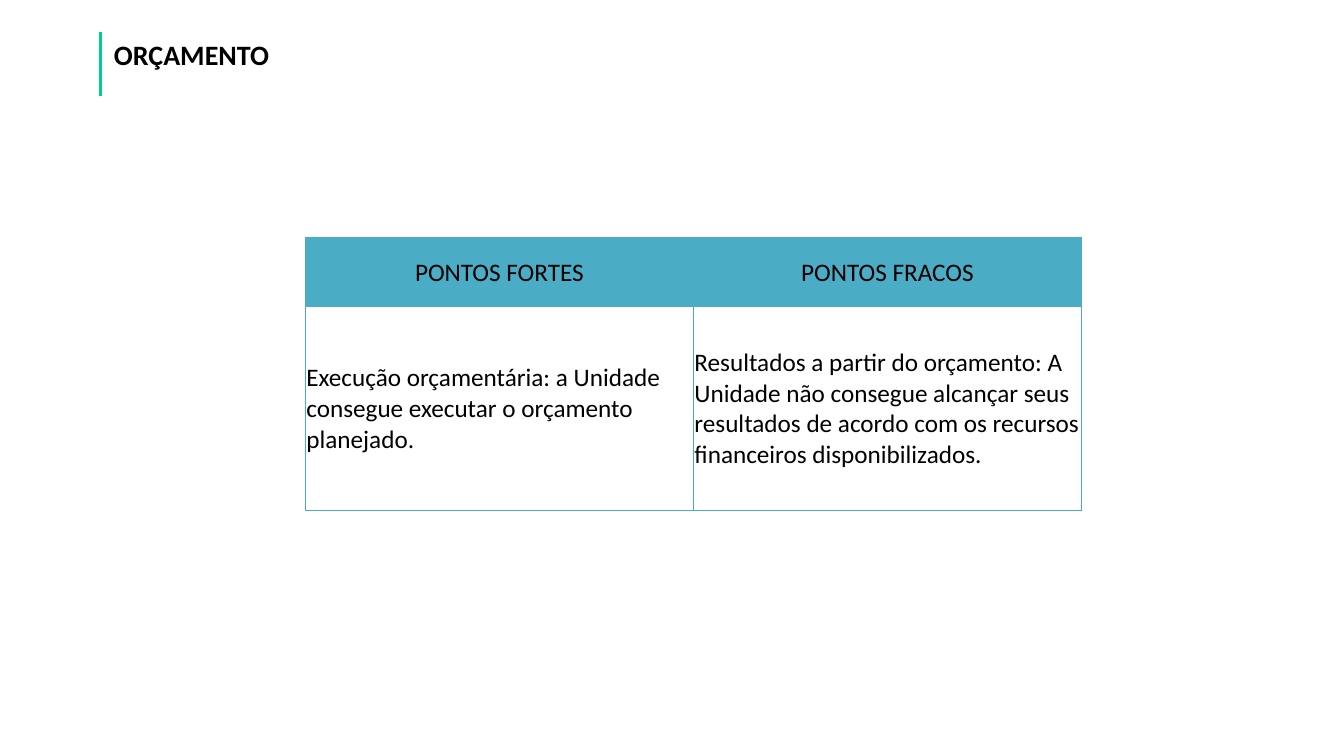
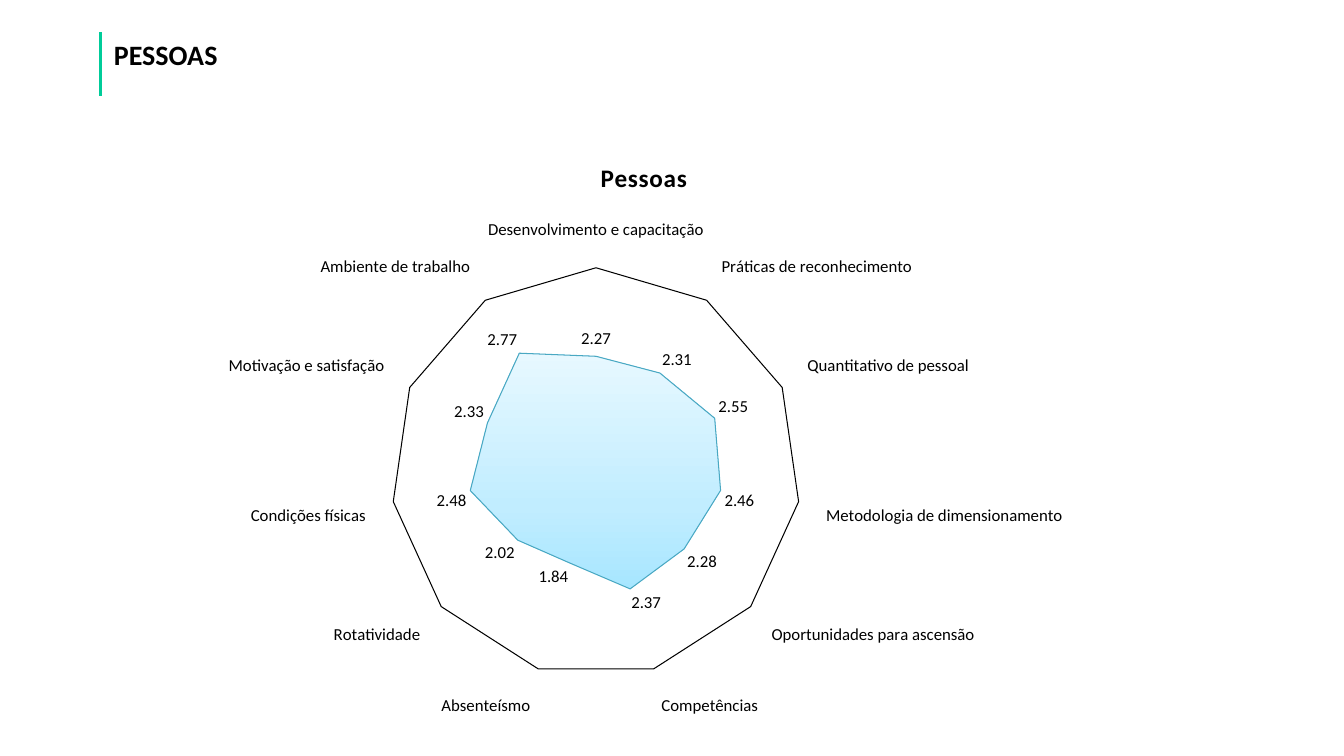
from copy import deepcopy

from lxml.etree import SubElement
from pptx import Presentation
from pptx.chart.data import CategoryChartData
from pptx.dml.color import RGBColor
from pptx.enum.chart import XL_CHART_TYPE, XL_TICK_LABEL_POSITION, XL_TICK_MARK
from pptx.enum.text import MSO_ANCHOR, MSO_AUTO_SIZE, PP_ALIGN
from pptx.oxml import parse_xml
from pptx.oxml.ns import nsdecls, qn
from pptx.util import Emu, Inches, Pt

COLORS = {
    "text": "000000", "accent": "00CC99", "table": "4BACC6",
    "axis": "D9D9D9", "area_line": "49A8C2",
    "area_low": "A7E6FF", "area_mid": "C1EDFF", "area_high": "E7F8FF",
}
FONT = "Calibri"

# The slide is a grid of 160 columns by 90 rows of square units
COLUMNS, ROWS = 160, 90
UNIT = 76200
TITLE_BOX = (12.36, 3.84, 103, 5.28)
TITLE_RULE = (12, 3.84, 12, 11.4)
TABLE_BOX = (36.36, 28.32, 92.4, 32.5)
CHART_BOX = (16.1, 15.72, 121.9, 71.76)

BUDGET_ROWS = [
    ["PONTOS FORTES", "PONTOS FRACOS"],
    ["Execução orçamentária: a Unidade consegue executar o orçamento planejado.",
     "Resultados a partir do orçamento: A Unidade não consegue alcançar seus "
     "resultados de acordo com os recursos financeiros disponibilizados."],
]
PEOPLE_SCORES = {
    "Desenvolvimento e capacitação": 2.27,
    "Práticas de reconhecimento": 2.31,
    "Quantitativo de pessoal": 2.55,
    "Metodologia de dimensionamento": 2.46,
    "Oportunidades para ascensão": 2.28,
    "Competências": 2.37,
    "Absenteísmo": 1.84,
    "Rotatividade": 2.02,
    "Condições físicas": 2.48,
    "Motivação e satisfação": 2.33,
    "Ambiente de trabalho": 2.77,
}


def grid(*units):
    return [Emu(round(unit * UNIT)) for unit in units]


def color(name):
    return RGBColor.from_string(COLORS[name])


def style_font(font, size, bold=False):
    font.name, font.size, font.bold = FONT, Pt(size), bold
    font.color.rgb = color("text")


def style_line(line, name, width):
    line.color.rgb = color(name)
    line.width = Pt(width)


def add_titled_slide(prs, text):
    slide = prs.slides.add_slide(prs.slide_layouts[5])
    # Vertical rule beside the title
    rule = slide.shapes.add_connector(1, *grid(*TITLE_RULE))
    style_line(rule.line, "accent", 2.25)
    SubElement(rule._element.spPr, qn("a:effectLst"))
    # Title
    title = slide.shapes.title
    title.left, title.top, title.width, title.height = grid(*TITLE_BOX)
    frame = title.text_frame
    frame.text = text
    frame.word_wrap = True
    frame.auto_size = MSO_AUTO_SIZE.SHAPE_TO_FIT_TEXT
    frame.vertical_anchor = MSO_ANCHOR.TOP
    heading = frame.paragraphs[0]
    heading.alignment = PP_ALIGN.LEFT
    style_font(heading.font, 20, bold=True)
    return slide


def set_borders(cell, name, width):
    properties = cell._tc.get_or_add_tcPr()
    for index, side in enumerate(("lnL", "lnR", "lnT", "lnB")):
        properties.insert(index, parse_xml(
            f'<a:{side} {nsdecls("a")} w="{Pt(width)}"><a:solidFill>'
            f'<a:srgbClr val="{COLORS[name]}"/></a:solidFill></a:{side}>'))


def add_points_table(slide, box, rows):
    left, top, width, height = grid(*box)
    table = slide.shapes.add_table(len(rows), len(rows[0]), left, top, width, height).table
    table.first_row = table.horz_banding = False
    for column, share in zip(table.columns, (0.5, 0.5)):
        column.width = round(width * share)
    table.rows[0].height = round(height * 0.25)
    table.rows[1].height = height - table.rows[0].height
    for row_index, texts in enumerate(rows):
        for column_index, text in enumerate(texts):
            cell = table.cell(row_index, column_index)
            cell.text = text
            cell.vertical_anchor = MSO_ANCHOR.MIDDLE
            cell.margin_left = cell.margin_right = cell.margin_top = Inches(0.01)
            cell.margin_bottom = 0
            paragraph = cell.text_frame.paragraphs[0]
            style_font(paragraph.font, 18)
            if row_index == 0:
                paragraph.alignment = PP_ALIGN.CENTER
                cell.fill.solid()
                cell.fill.fore_color.rgb = color("table")
            else:
                paragraph.alignment = PP_ALIGN.LEFT
                cell.fill.background()
            set_borders(cell, "table", 1)


def set_chart_layout(part, index, inner=False, **shares):
    """Place a chart part by shares of the chart's size."""
    for old in part.findall(qn("c:layout")):
        part.remove(old)
    target = '<c:layoutTarget val="inner"/>' if inner else ""
    modes = "".join(f'<c:{key}Mode val="edge"/>' for key in "xy")
    values = "".join(f'<c:{key} val="{share}"/>' for key, share in shares.items())
    part.insert(index, parse_xml(
        f'<c:layout {nsdecls("c")}><c:manualLayout>{target}{modes}{values}'
        f'</c:manualLayout></c:layout>'))


def fill_area(series):
    fill = series.format.fill
    fill.gradient()
    fill.gradient_angle = 90
    low, high = fill.gradient_stops
    low.color.rgb, low.position = color("area_low"), 0
    high.color.rgb, high.position = color("area_high"), 1
    stops = series._element.find(".//" + qn("a:gsLst"))
    middle = deepcopy(stops[0])
    middle.set("pos", "35000")
    middle.find(qn("a:srgbClr")).set("val", COLORS["area_mid"])
    stops.insert(1, middle)
    style_line(series.format.line, "area_line", 0.75)


def add_score_radar(slide, box, title, scores):
    data = CategoryChartData(number_format="0.00")
    data.categories = list(scores)
    data.add_series("Series 1", list(scores.values()))
    chart = slide.shapes.add_chart(XL_CHART_TYPE.RADAR_FILLED, *grid(*box), data).chart
    style_font(chart.font, 10)
    chart.has_legend = False

    # Chart title
    chart.has_title = True
    frame = chart.chart_title.text_frame
    frame.text = title
    style_font(frame.paragraphs[0].font, 18, bold=True)
    frame.paragraphs[0].font._element.set("spc", "50")
    chart.chart_title.include_in_layout = False
    set_chart_layout(chart.element.find(".//" + qn("c:title")), 1, x=0.45, y=0.04)
    set_chart_layout(chart.element.find(".//" + qn("c:plotArea")), 0, inner=True,
                     x=0.25, y=0.22, w=0.4, h=0.69)

    # Axes
    categories, values = chart.category_axis, chart.value_axis
    for axis in (categories, values):
        axis.major_tick_mark = axis.minor_tick_mark = XL_TICK_MARK.NONE
        style_font(axis.tick_labels.font, 12)
    categories.has_major_gridlines = False
    style_line(categories.format.line, "axis", 0.75)
    values.minimum_scale, values.maximum_scale, values.major_unit = 0, 4, 4
    values.tick_label_position = XL_TICK_LABEL_POSITION.NONE
    values.format.line.fill.background()
    values.has_major_gridlines = True
    style_line(values.major_gridlines.format.line, "text", 0.75)

    # Scored area and its labels
    plot = chart.plots[0]
    plot.vary_by_categories = False
    fill_area(plot.series[0])
    plot.has_data_labels = True
    labels = plot.data_labels
    labels.show_value = True
    labels.number_format, labels.number_format_is_linked = "0.00", False
    style_font(labels.font, 12)


def main():
    prs = Presentation()
    prs.slide_width, prs.slide_height = grid(COLUMNS, ROWS)
    add_points_table(add_titled_slide(prs, "ORÇAMENTO"), TABLE_BOX, BUDGET_ROWS)
    add_score_radar(add_titled_slide(prs, "PESSOAS"), CHART_BOX, "Pessoas", PEOPLE_SCORES)
    prs.save("out.pptx")


if __name__ == "__main__":
    main()
